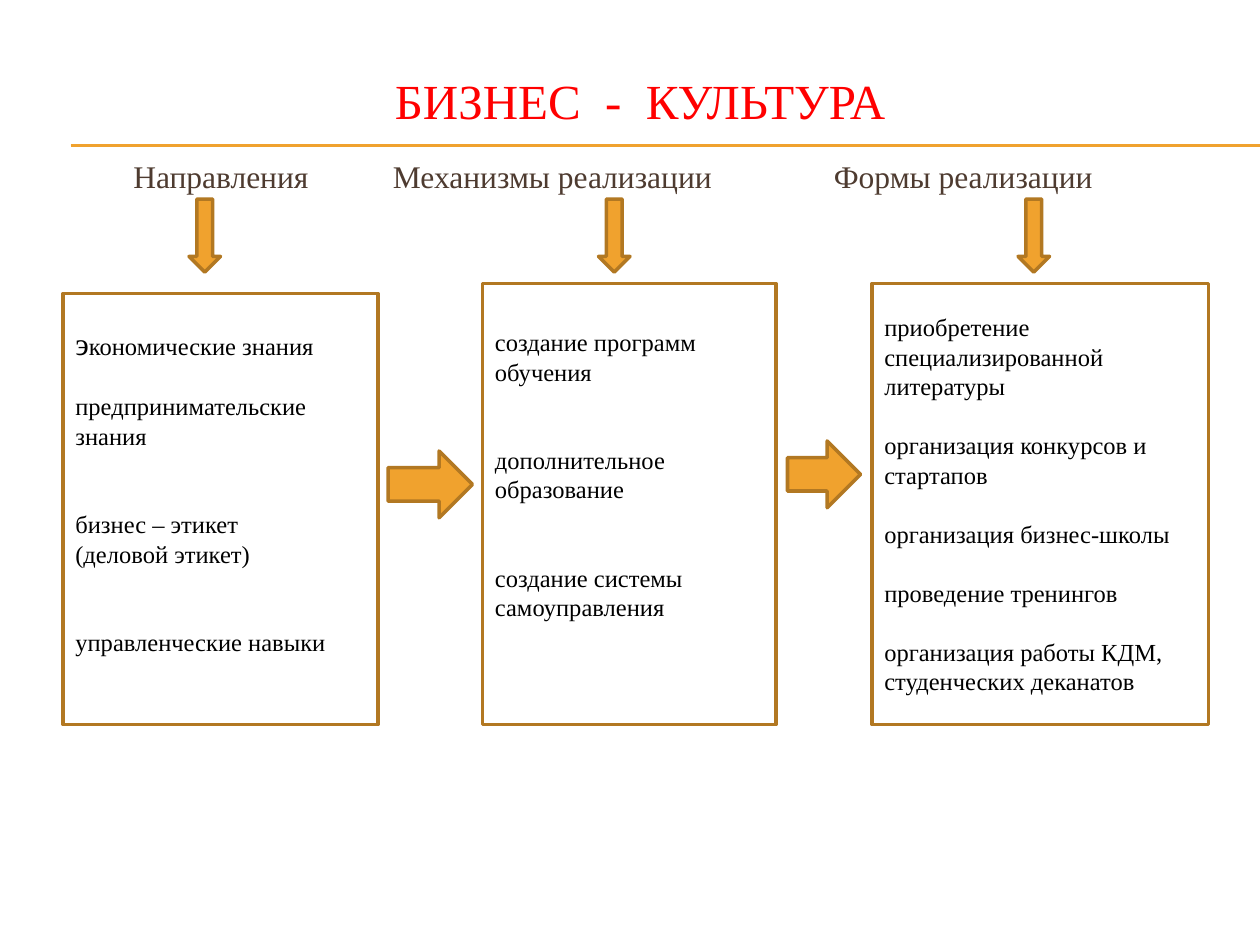
"""Build the business culture slide: three headed columns linked by block arrows."""
import pptx
import pptx.dml.color
import pptx.enum.shapes
import pptx.enum.text
import pptx.oxml.ns
import pptx.util
from lxml import etree
from pptx.util import Inches

SHAPES = pptx.enum.shapes.MSO_SHAPE
ALIGN = pptx.enum.text.PP_ALIGN
MIDDLE = pptx.enum.text.MSO_ANCHOR.MIDDLE
LINE_HEIGHT = 16.85


def paint(color_format, value):
    color_format.rgb = pptx.dml.color.RGBColor.from_string(value)


def add_run(paragraph, text, size, color):
    run = paragraph.add_run()
    run.text = text
    run.font.name = "Times New Roman"
    run.font.size = pptx.util.Pt(size)
    paint(run.font.color, color)


presentation = pptx.Presentation()
presentation.slide_width = Inches(10)
presentation.slide_height = Inches(7.5)
slide = presentation.slides.add_slide(presentation.slide_layouts[6])

for y in (1.15, 1.16):
    rule = slide.shapes.add_connector(
        pptx.enum.shapes.MSO_CONNECTOR.STRAIGHT, Inches(0.56), Inches(y), Inches(10), Inches(y))
    rule.line.width = pptx.util.Pt(0.75)
    paint(rule.line.color, "F0A22E")
    etree.SubElement(rule.element.spPr, pptx.oxml.ns.qn("a:effectLst"))

title = slide.shapes.add_textbox(Inches(0.33), Inches(0.5), Inches(9.5), Inches(0.58))
title.text_frame.word_wrap = True
title.text_frame.vertical_anchor = MIDDLE
paragraph = title.text_frame.paragraphs[0]
paragraph.alignment = ALIGN.CENTER
add_run(paragraph, "БИЗНЕС  -  КУЛЬТУРА", 28, "FF0000")

headings = slide.shapes.add_textbox(Inches(0.33), Inches(1.2), Inches(9.5), Inches(0.4))
headings.text_frame.word_wrap = True
paragraph = headings.text_frame.paragraphs[0]
tab_list = etree.SubElement(paragraph._p.get_or_add_pPr(), pptx.oxml.ns.qn("a:tabLst"))
for heading, position in (
    ("Направления", 0.63),
    ("Механизмы реализации", 2.69),
    ("Формы реализации", 6.19),
):
    etree.SubElement(tab_list, pptx.oxml.ns.qn("a:tab"), pos=str(Inches(position)), algn="l")
    add_run(paragraph, "\t" + heading, 18, "4E3B30")

columns = [
    (0.5, 2.33, 2.5, 1, [
        (0, [("э", 18), ("кономические знания", 14)]),
        (1, [("предпринимательские", 14)]),
        (0, [("знания", 14)]),
        (2, [("бизнес – этикет", 14)]),
        (0, [("(деловой этикет)", 14)]),
        (2, [("управленческие навыки", 14)]),
    ]),
    (3.83, 2.25, 2.33, 2, [
        (0, [("создание программ обучения", 14)]),
        (2, [("дополнительное образование", 14)]),
        (2, [("создание системы самоуправления", 14)]),
    ]),
    (6.92, 2.25, 2.67, 0, [
        (0, [("приобретение специализированной литературы", 14)]),
        (1, [("организация конкурсов и стартапов", 14)]),
        (1, [("организация бизнес-школы", 14)]),
        (1, [("проведение тренингов", 14)]),
        (1, [("организация работы КДМ, студенческих деканатов", 14)]),
    ]),
]
for left, top, width, lines_below, items in columns:
    box = slide.shapes.add_shape(
        SHAPES.RECTANGLE, Inches(left), Inches(top), Inches(width), Inches(5.75 - top))
    box.shadow.inherit = False
    box.fill.background()
    box.line.width = pptx.util.Pt(2)
    paint(box.line.color, "B27822")
    frame = box.text_frame
    frame.word_wrap = True
    frame.vertical_anchor = MIDDLE
    frame.margin_bottom = Inches(0.05) + pptx.util.Pt(lines_below * LINE_HEIGHT)
    for index, (lines_above, runs) in enumerate(items):
        paragraph = frame.add_paragraph() if index else frame.paragraphs[0]
        paragraph.alignment = ALIGN.LEFT
        paragraph.line_spacing = pptx.util.Pt(LINE_HEIGHT)
        paragraph.space_before = pptx.util.Pt(lines_above * LINE_HEIGHT)
        for text, size in runs:
            add_run(paragraph, text, size, "000000")

arrows = [(SHAPES.DOWN_ARROW, left, 1.58, 0.25, 0.58) for left in (1.5, 4.75, 8.08)]
arrows += [
    (SHAPES.RIGHT_ARROW, 3.08, 3.58, 0.67, 0.53),
    (SHAPES.RIGHT_ARROW, 6.25, 3.5, 0.58, 0.53),
]
for kind, *bounds in arrows:
    arrow = slide.shapes.add_shape(kind, *map(Inches, bounds))
    arrow.shadow.inherit = False
    arrow.fill.solid()
    paint(arrow.fill.fore_color, "F0A22E")
    arrow.line.width = pptx.util.Pt(2)
    paint(arrow.line.color, "B27822")

presentation.save("out.pptx")
